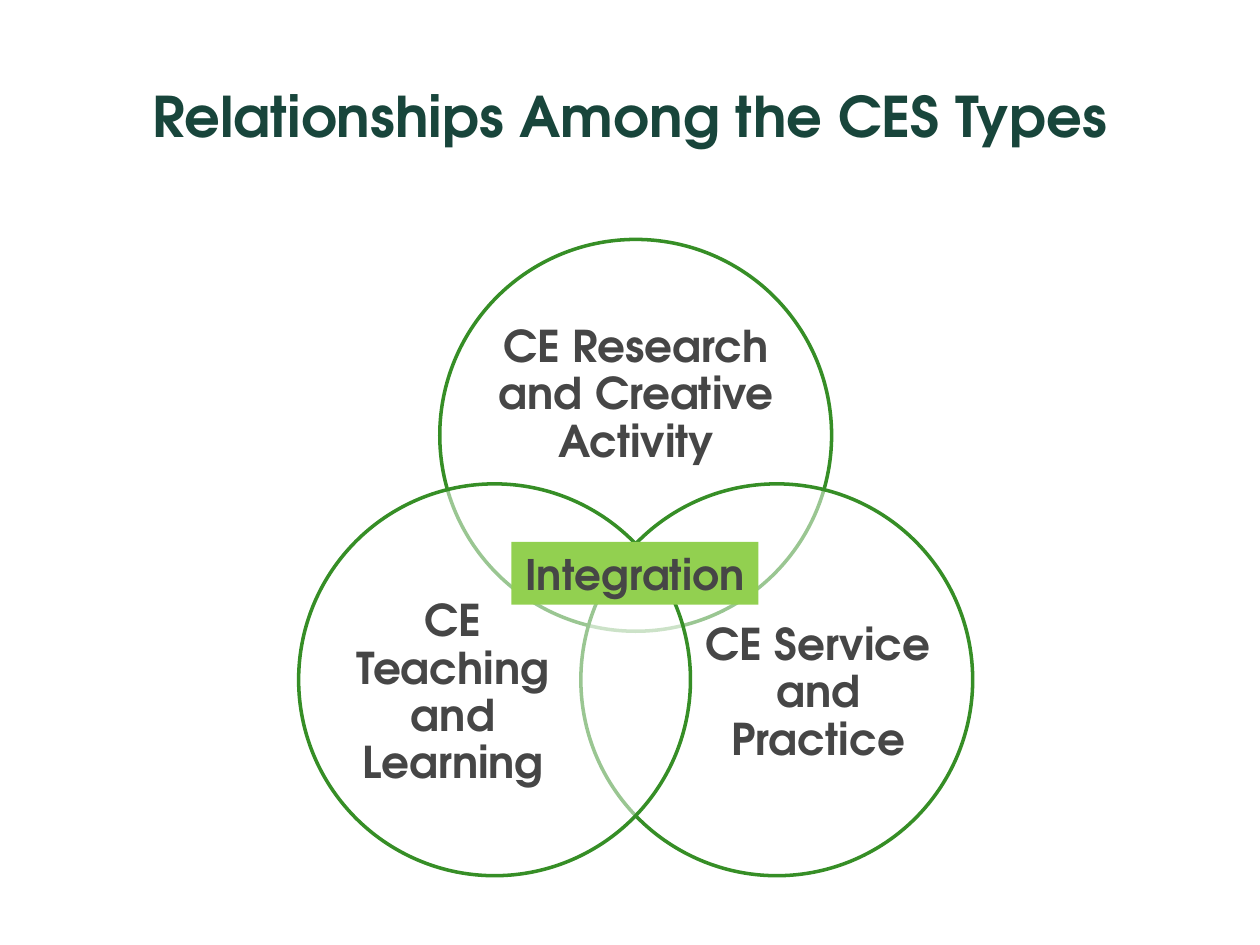
from lxml.etree import SubElement
from pptx import Presentation
from pptx.dml.color import RGBColor
from pptx.enum.shapes import MSO_SHAPE
from pptx.enum.text import MSO_ANCHOR, PP_ALIGN
from pptx.oxml.ns import qn
from pptx.util import Inches, Pt

FONT = "TeX Gyre Adventor"
DARK_GREEN = RGBColor(0x18, 0x45, 0x3B)
RING_GREEN = RGBColor(0x36, 0x8E, 0x26)
LIME = RGBColor(0x92, 0xD0, 0x50)
GRAY = RGBColor(0x46, 0x46, 0x46)
WHITE = RGBColor(0xFF, 0xFF, 0xFF)

DIAMETER = 3.11


class VennSlide:
    def __init__(self, slide):
        self.shapes = slide.shapes

    def style_text(self, sp, text, size, color, spacing=1.0, wrap=True):
        tf = sp.text_frame
        tf.word_wrap = wrap
        tf.vertical_anchor = MSO_ANCHOR.MIDDLE
        tf.text = text
        p = tf.paragraphs[0]
        p.alignment = PP_ALIGN.CENTER
        p.line_spacing = spacing
        font = p.runs[0].font
        font.name, font.size, font.bold = FONT, Pt(size), True
        font.color.rgb = color

    def label(self, box, text, size, color, spacing=1.0):
        sp = self.shapes.add_textbox(*map(Inches, box))
        tf = sp.text_frame
        tf.margin_left = tf.margin_right = tf.margin_top = tf.margin_bottom = 0
        self.style_text(sp, text, size, color, spacing)

    def shape(self, kind, box, fill):
        sp = self.shapes.add_shape(kind, *map(Inches, box))
        sp.shadow.inherit = False
        sp.fill.solid()
        sp.fill.fore_color.rgb = fill
        sp.line.fill.background()
        return sp

    def circle(self, left, top):
        sp = self.shape(MSO_SHAPE.OVAL, (left, top, DIAMETER, DIAMETER), WHITE)
        sp.line.color.rgb = RING_GREEN
        sp.line.width = Pt(2)
        # Half-transparent fill
        color = sp.element.spPr.find(qn("a:solidFill"))[0]
        SubElement(color, qn("a:alpha")).set("val", "50000")

    def tag(self, box, text):
        sp = self.shape(MSO_SHAPE.RECTANGLE, box, LIME)
        self.style_text(sp, text, 24, GRAY, wrap=False)


def main():
    prs = Presentation()
    prs.slide_width, prs.slide_height = Inches(10), Inches(7.5)
    s = VennSlide(prs.slides.add_slide(prs.slide_layouts[6]))

    # Title
    s.label((0.5, 0.58, 9, 0.67), "Relationships Among the CES Types", 32, DARK_GREEN)

    # Overlapping circles, each with its label
    circles = [
        (3.49, 1.9, (3.91, 2.44, 2.28, 1.4), "CE Research and Creative Activity"),
        (4.61, 3.84, (5.56, 4.65, 1.87, 1.71), "CE Service and Practice"),
        (2.37, 3.84, (2.66, 4.65, 1.87, 1.71), "CE Teaching and Learning"),
    ]
    for left, top, label_box, text in circles:
        s.circle(left, top)
        s.label(label_box, text, 25, GRAY, spacing=0.9)

    # Shared centre
    s.tag((4.06, 4.3, 1.96, 0.5), "Integration")

    prs.save("out.pptx")


if __name__ == "__main__":
    main()
